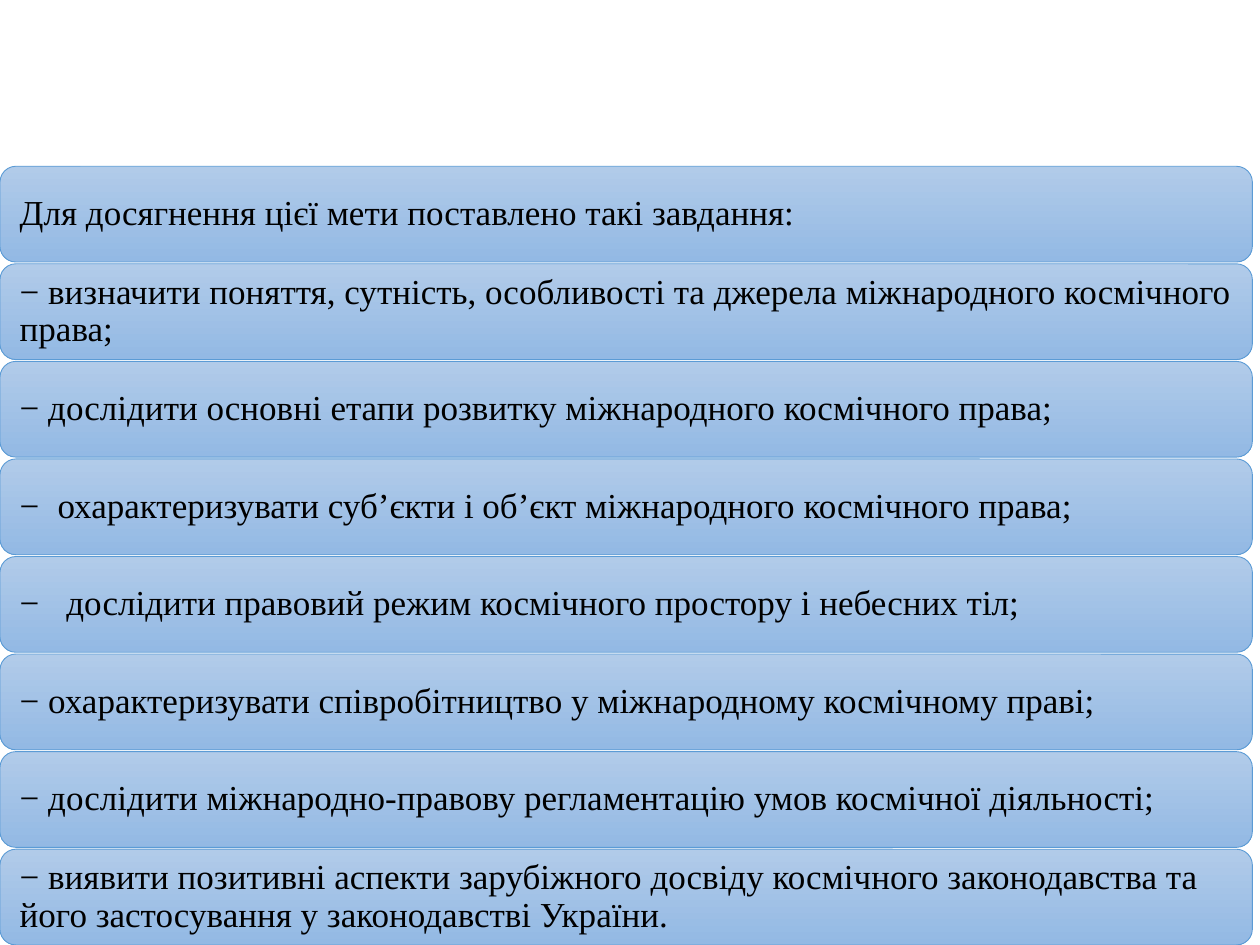
import dataclasses
import typing

import lxml.etree
import pptx
import pptx.dml.color
import pptx.enum.shapes
import pptx.enum.text
import pptx.oxml.ns
import pptx.util

Inches = pptx.util.Inches
Pt = pptx.util.Pt

COLORS = {"top": "B1CBE9", "base": "93B9E4", "edge": "5B9BD5", "text": "000000"}
FIRST, LAST = 1.32, 6.74
WIDTH, HEIGHT = 9.94, 0.76
FRAME = {
    "word_wrap": True,
    "vertical_anchor": pptx.enum.text.MSO_ANCHOR.MIDDLE,
    "margin_left": Inches(0.12),
    "margin_right": Inches(0.12),
    "margin_top": Inches(0.08),
    "margin_bottom": Inches(0.08),
}
PARA = {"alignment": pptx.enum.text.PP_ALIGN.LEFT, "line_spacing": 0.9}
FONT = {"name": "Times New Roman", "size": Pt(20)}


@dataclasses.dataclass
class Task:
    text: str
    tab: float = 0


TASKS = [
    Task("Для досягнення цієї мети поставлено такі завдання:"),
    Task("− визначити поняття, сутність, особливості та джерела міжнародного космічного права;"),
    Task("− дослідити основні етапи розвитку міжнародного космічного права;"),
    Task("−\tохарактеризувати суб’єкти і об’єкт міжнародного космічного права;", 0.3),
    Task("−\tдослідити правовий режим космічного простору і небесних тіл;", 0.37),
    Task("− охарактеризувати співробітництво у міжнародному космічному праві;"),
    Task("− дослідити міжнародно-правову регламентацію умов космічної діяльності;"),
    Task("− виявити позитивні аспекти зарубіжного досвіду космічного законодавства "
         "та його застосування у законодавстві України."),
]


def color(name: str) -> pptx.dml.color.RGBColor:
    return pptx.dml.color.RGBColor.from_string(COLORS[name])


def apply(target: typing.Any, values: dict) -> None:
    for name, value in values.items():
        setattr(target, name, value)


def add_tab(para: typing.Any, pos: float) -> None:
    qn = pptx.oxml.ns.qn
    tabs = lxml.etree.SubElement(para._p.get_or_add_pPr(), qn("a:tabLst"))
    lxml.etree.SubElement(tabs, qn("a:tab"), pos=str(Inches(pos)), algn="l")


def draw_task(slide: typing.Any, task: Task, top: float) -> None:
    bar = slide.shapes.add_shape(
        pptx.enum.shapes.MSO_SHAPE.ROUNDED_RECTANGLE,
        Inches(0), Inches(top), Inches(WIDTH), Inches(HEIGHT))
    bar.shadow.inherit = False
    bar.fill.gradient()
    bar.fill.gradient_angle = 270
    for stop, name in zip(bar.fill.gradient_stops, ("top", "base")):
        stop.color.rgb = color(name)
    bar.line.color.rgb = color("edge")
    bar.line.width = Pt(0.5)

    apply(bar.text_frame, FRAME)
    para = bar.text_frame.paragraphs[0]
    if task.tab:
        add_tab(para, task.tab)
    apply(para, PARA)
    run = para.add_run()
    run.text = task.text
    apply(run.font, FONT)
    run.font.color.rgb = color("text")


def main() -> None:
    deck = pptx.Presentation()
    deck.slide_width, deck.slide_height = Inches(10), Inches(7.5)
    slide = deck.slides.add_slide(deck.slide_layouts[6])
    step = (LAST - FIRST) / (len(TASKS) - 1)
    for i, task in enumerate(TASKS):
        draw_task(slide, task, FIRST + i * step)
    deck.save("out.pptx")


if __name__ == "__main__":
    main()
